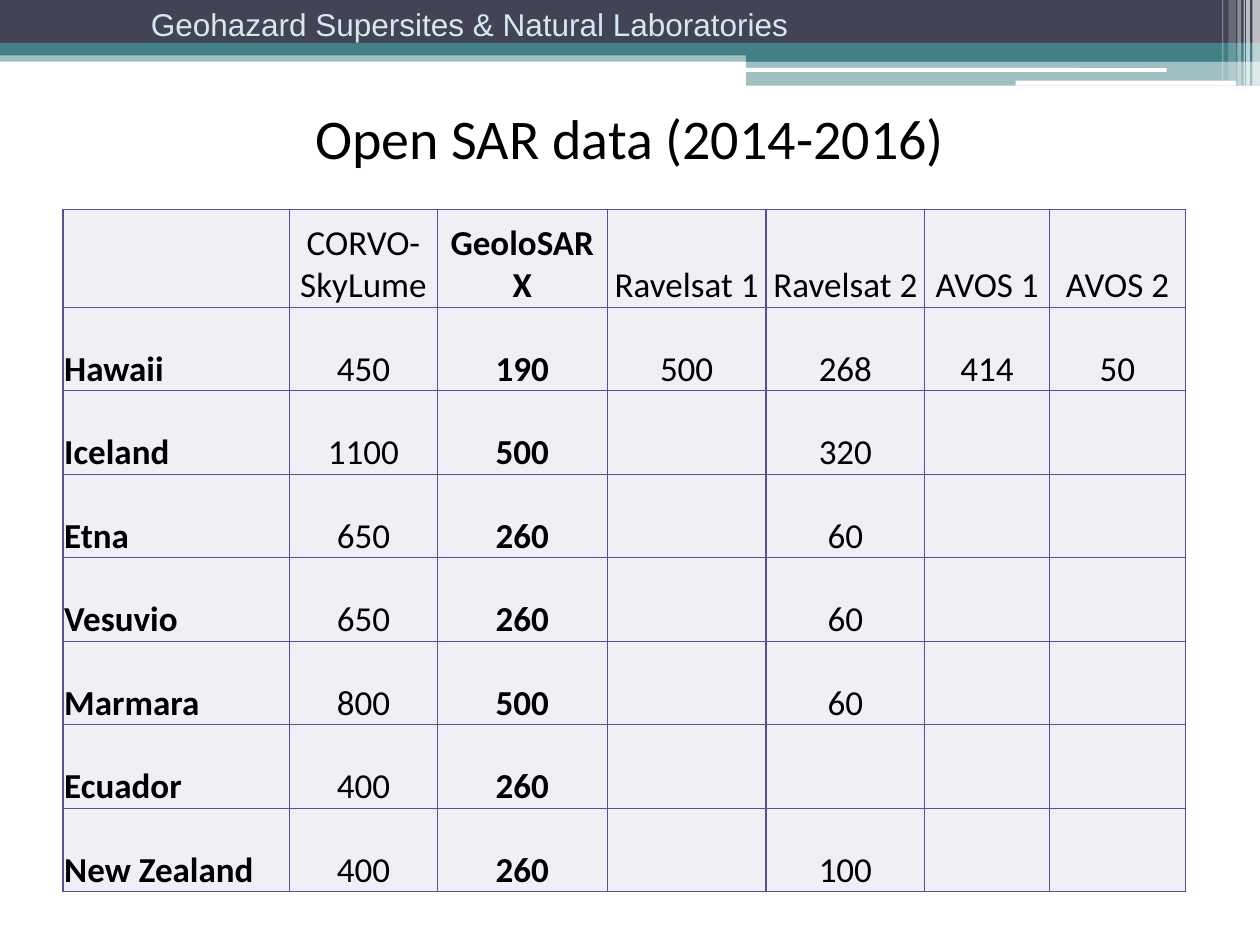
from dataclasses import dataclass

from lxml.etree import SubElement
from pptx import Presentation
from pptx.dml.color import RGBColor
from pptx.enum.shapes import MSO_SHAPE as Preset
from pptx.enum.text import MSO_ANCHOR as Anchor, PP_ALIGN as Align
from pptx.oxml import parse_xml
from pptx.oxml.ns import nsdecls, qn
from pptx.util import Inches, Pt


@dataclass(frozen=True)
class Theme:
    navy: str = "424456"
    teal: str = "438086"
    white: str = "FFFFFF"
    black: str = "000000"
    pale_teal: str = "D6E9EA"
    cell: str = "F0EFF6"
    border: str = "53548A"
    heading_font: str = "Arial"
    body_font: str = "Calibri"
    heading_size: int = 18
    title_size: int = 32
    table_size: int = 20
    border_width: float = 0.75


THEME = Theme()


@dataclass(frozen=True)
class Band:
    left: float
    top: float
    width: float
    height: float
    color: str
    opacity: int = 100
    rounded: bool = False


@dataclass(frozen=True)
class Label:
    text: str
    left: float
    top: float
    width: float
    height: float
    align: Align
    anchor: Anchor
    wrap: bool
    font: dict


BANDS = [
    Band(0, 0.4, 10, 0.09, THEME.teal, 50),
    Band(0, 0, 10, 0.34, THEME.navy),
    Band(0, 0.34, 10, 0.1, THEME.teal),
    Band(5.92, 0.39, 4.08, 0.1, THEME.teal),
    Band(5.92, 0.48, 4.08, 0.2, THEME.teal, 50),
    Band(5.91, 0.54, 3.35, 0.03, THEME.white, rounded=True),
    Band(8.06, 0.64, 1.75, 0.04, THEME.white, rounded=True),
    Band(9.94, 0, 0.06, 0.68, THEME.white, 65),
    Band(9.89, 0, 0.03, 0.68, THEME.white, 65),
    Band(9.87, 0, 0.01, 0.68, THEME.white, 60),
    Band(9.82, 0, 0.03, 0.68, THEME.white, 40),
    Band(9.75, 0, 0.06, 0.64, THEME.white, 20),
    Band(9.7, 0, 0.01, 0.64, THEME.white, 30),
]

SAR_DATA = [
    ["", "CORVO-SkyLume", "GeoloSAR X", "Ravelsat 1", "Ravelsat 2", "AVOS 1", "AVOS 2"],
    ["Hawaii", "450", "190", "500", "268", "414", "50"],
    ["Iceland", "1100", "500", "", "320", "", ""],
    ["Etna", "650", "260", "", "60", "", ""],
    ["Vesuvio", "650", "260", "", "60", "", ""],
    ["Marmara", "800", "500", "", "60", "", ""],
    ["Ecuador", "400", "260", "", "", "", ""],
    ["New Zealand", "400", "260", "", "100", "", ""],
]
COLUMN_WIDTHS = [1.8, 1.17, 1.35, 1.26, 1.26, 0.99, 1.08]
TABLE_HEIGHT, HEADER_HEIGHT = 5.42, 0.78
ROW_HEIGHT = (TABLE_HEIGHT - HEADER_HEIGHT) / (len(SAR_DATA) - 1)
BOLD_COLUMNS = (0, 2)


def font_format(name: str, size: int, bold: bool = False) -> dict:
    return {"name": name, "size": Pt(size), "bold": bold}


def apply_font(font, values: dict, color: str) -> None:
    for attribute, value in values.items():
        setattr(font, attribute, value)
    font.color.rgb = RGBColor.from_string(color)


def draw_band(slide, band: Band) -> None:
    preset = Preset.ROUNDED_RECTANGLE if band.rounded else Preset.RECTANGLE
    shape = slide.shapes.add_shape(
        preset, *map(Inches, (band.left, band.top, band.width, band.height)))
    shape.shadow.inherit = False
    shape.line.fill.background()
    shape.fill.solid()
    shape.fill.fore_color.rgb = RGBColor.from_string(band.color)
    if band.opacity < 100:
        color = shape.fill._xPr.find(qn("a:solidFill"))[0]
        SubElement(color, qn("a:alpha"), val=str(band.opacity * 1000))


def draw_label(slide, label: Label, color: str) -> None:
    box = slide.shapes.add_textbox(
        *map(Inches, (label.left, label.top, label.width, label.height)))
    frame = box.text_frame
    frame.word_wrap = label.wrap
    frame.vertical_anchor = label.anchor
    paragraph = frame.paragraphs[0]
    paragraph.text = label.text
    paragraph.alignment = label.align
    apply_font(paragraph.font, label.font, color)


def add_borders(cell) -> None:
    """Line all four sides; the lines must come before the fill."""
    properties = cell._tc.get_or_add_tcPr()
    for index, side in enumerate(("lnL", "lnR", "lnT", "lnB")):
        properties.insert(index, parse_xml(
            f'<a:{side} {nsdecls("a")} w="{Pt(THEME.border_width)}"><a:solidFill>'
            f'<a:srgbClr val="{THEME.border}"/></a:solidFill></a:{side}>'))


def fill_cell(cell, text: str, column: int) -> None:
    cell_format = {
        "margin_left": Inches(0.01), "margin_right": Inches(0.01),
        "margin_top": Inches(0.01), "margin_bottom": 0,
        "vertical_anchor": Anchor.BOTTOM,
    }
    for attribute, value in cell_format.items():
        setattr(cell, attribute, value)
    cell.fill.solid()
    cell.fill.fore_color.rgb = RGBColor.from_string(THEME.cell)
    add_borders(cell)
    paragraph = cell.text_frame.paragraphs[0]
    paragraph.text = text
    paragraph.alignment = Align.CENTER if column else Align.LEFT
    values = font_format(THEME.body_font, THEME.table_size, column in BOLD_COLUMNS)
    apply_font(paragraph.font, values, THEME.black)


def draw_table(slide) -> None:
    table = slide.shapes.add_table(
        len(SAR_DATA), len(COLUMN_WIDTHS), Inches(0.5), Inches(1.66),
        Inches(sum(COLUMN_WIDTHS)), Inches(TABLE_HEIGHT)).table
    for column, width in zip(table.columns, COLUMN_WIDTHS):
        column.width = Inches(width)
    for row_index, texts in enumerate(SAR_DATA):
        table.rows[row_index].height = Inches(ROW_HEIGHT if row_index else HEADER_HEIGHT)
        for column_index, text in enumerate(texts):
            fill_cell(table.cell(row_index, column_index), text, column_index)


def main() -> None:
    presentation = Presentation()
    presentation.slide_width, presentation.slide_height = Inches(10), Inches(7.5)
    slide = presentation.slides.add_slide(presentation.slide_layouts[6])
    for band in BANDS:
        draw_band(slide, band)
    heading = Label("Geohazard Supersites & Natural Laboratories", 1.1, -0.01, 5.43, 0.4,
                    Align.LEFT, Anchor.TOP, False,
                    font_format(THEME.heading_font, THEME.heading_size))
    title = Label("Open SAR data (2014-2016)", 0.5, 0.5, 9, 1.17,
                  Align.CENTER, Anchor.MIDDLE, True,
                  font_format(THEME.body_font, THEME.title_size))
    draw_label(slide, heading, THEME.pale_teal)
    draw_label(slide, title, THEME.black)
    draw_table(slide)
    presentation.save("out.pptx")


if __name__ == "__main__":
    main()
